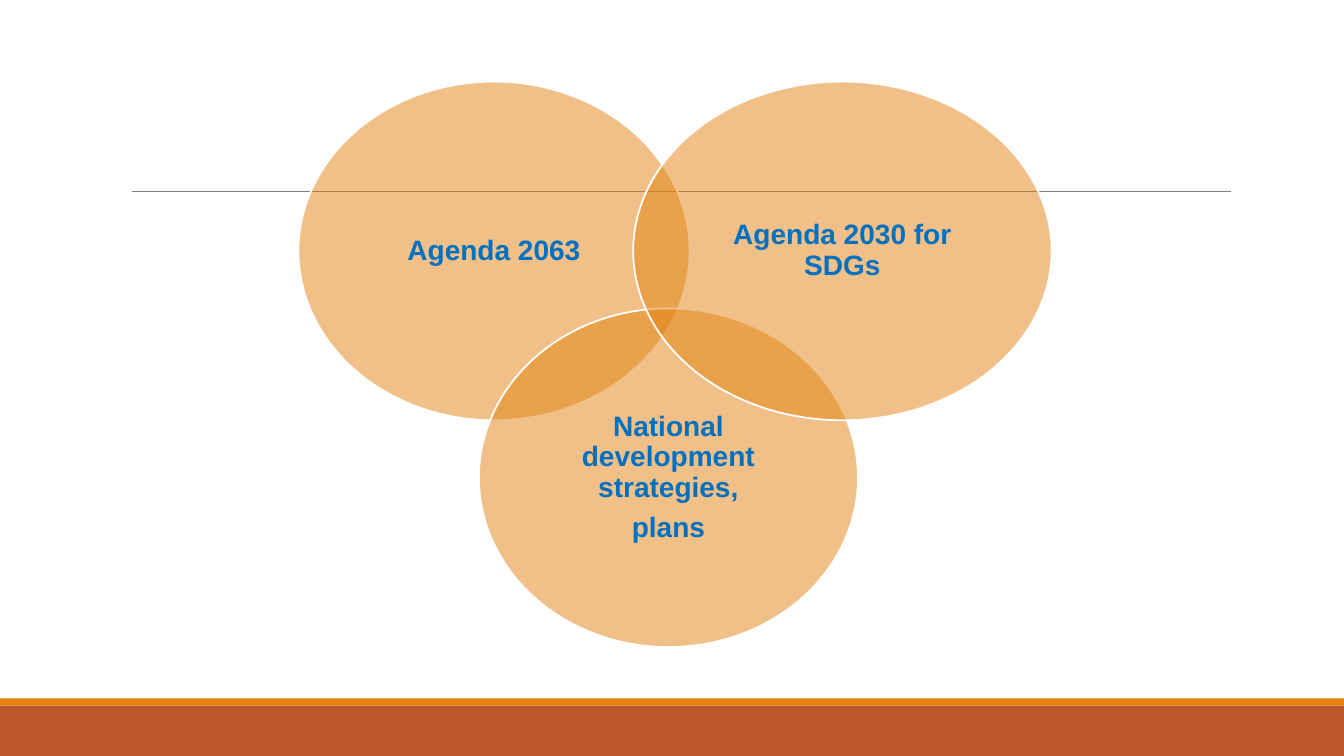
import pptx
import pptx.util
import pptx.dml.color
import pptx.enum.shapes
import pptx.enum.text
import pptx.oxml.ns
from lxml import etree

Inches = pptx.util.Inches
SHAPES = pptx.enum.shapes.MSO_SHAPE

# Content: the circles of the Venn diagram, back to front
CIRCLES = [
    {"left": 2.96, "top": 0.81, "width": 3.88, "lines": ["Agenda 2063"]},
    {"left": 4.75, "top": 3.06, "width": 3.76,
     "lines": ["National development strategies,", "plans"]},
    {"left": 6.28, "top": 0.81, "width": 4.15, "lines": ["Agenda 2030 for SDGs"]},
]
CIRCLE_HEIGHT = 3.36
SLIDE_WIDTH, SLIDE_HEIGHT = 13.33, 7.5
FOOTER_HEIGHT, STRIPE_HEIGHT = 0.5, 0.07
RULE_LEFT, RULE_RIGHT, RULE_TOP = 1.31, 12.21, 1.9
ORANGE, RUST, WHITE, GREY, BLUE = "E48312", "BD582C", "FFFFFF", "808080", "0070C0"


def color(hex_value):
    return pptx.dml.color.RGBColor.from_string(hex_value)


def add_filled_shape(slide, kind, left, top, width, height, fill,
                     alpha=None, line=None, line_width=1.25):
    shape = slide.shapes.add_shape(
        kind, Inches(left), Inches(top), Inches(width), Inches(height))
    shape.shadow.inherit = False
    shape.fill.solid()
    shape.fill.fore_color.rgb = color(fill)
    if alpha is not None:
        fill_color = shape.fill._xPr.find(".//" + pptx.oxml.ns.qn("a:srgbClr"))
        etree.SubElement(fill_color, pptx.oxml.ns.qn("a:alpha"), val=str(alpha * 1000))
    if line:
        shape.line.color.rgb = color(line)
        shape.line.width = pptx.util.Pt(line_width)
    else:
        shape.line.fill.background()
    return shape


def write_text(shape, lines, font="Arial", size=20, fill=BLUE, bold=True,
               margin=0.08, line_spacing=0.9, space_after=7):
    frame = shape.text_frame
    frame.word_wrap = True
    frame.vertical_anchor = pptx.enum.text.MSO_ANCHOR.MIDDLE
    frame.margin_left = frame.margin_right = Inches(margin)
    frame.margin_top = frame.margin_bottom = Inches(margin)
    for index, line in enumerate(lines):
        paragraph = frame.add_paragraph() if index else frame.paragraphs[0]
        paragraph.alignment = pptx.enum.text.PP_ALIGN.CENTER
        paragraph.line_spacing = line_spacing
        paragraph.space_after = pptx.util.Pt(space_after)
        run = paragraph.add_run()
        run.text = line
        run.font.name = font
        run.font.size = pptx.util.Pt(size)
        run.font.bold = bold
        run.font.color.rgb = color(fill)


def main():
    presentation = pptx.Presentation()
    presentation.slide_width = Inches(SLIDE_WIDTH)
    presentation.slide_height = Inches(SLIDE_HEIGHT)
    slide = presentation.slides.add_slide(presentation.slide_layouts[6])

    # Footer band and stripe
    footer_top = SLIDE_HEIGHT - FOOTER_HEIGHT
    add_filled_shape(slide, SHAPES.RECTANGLE, 0, footer_top,
                     SLIDE_WIDTH, FOOTER_HEIGHT, RUST)
    add_filled_shape(slide, SHAPES.RECTANGLE, 0, footer_top - STRIPE_HEIGHT,
                     SLIDE_WIDTH, STRIPE_HEIGHT, ORANGE)

    # Title rule
    rule = slide.shapes.add_connector(
        pptx.enum.shapes.MSO_CONNECTOR.STRAIGHT, Inches(RULE_LEFT),
        Inches(RULE_TOP), Inches(RULE_RIGHT), Inches(RULE_TOP))
    rule.line.color.rgb = color(GREY)
    rule.line.width = pptx.util.Pt(0.5)
    etree.SubElement(rule._element.spPr, pptx.oxml.ns.qn("a:effectLst"))

    # Venn circles with their labels
    for circle in CIRCLES:
        shape = add_filled_shape(
            slide, SHAPES.OVAL, circle["left"], circle["top"], circle["width"],
            CIRCLE_HEIGHT, ORANGE, alpha=50, line=WHITE)
        write_text(shape, circle["lines"])

    presentation.save("out.pptx")


if __name__ == "__main__":
    main()
